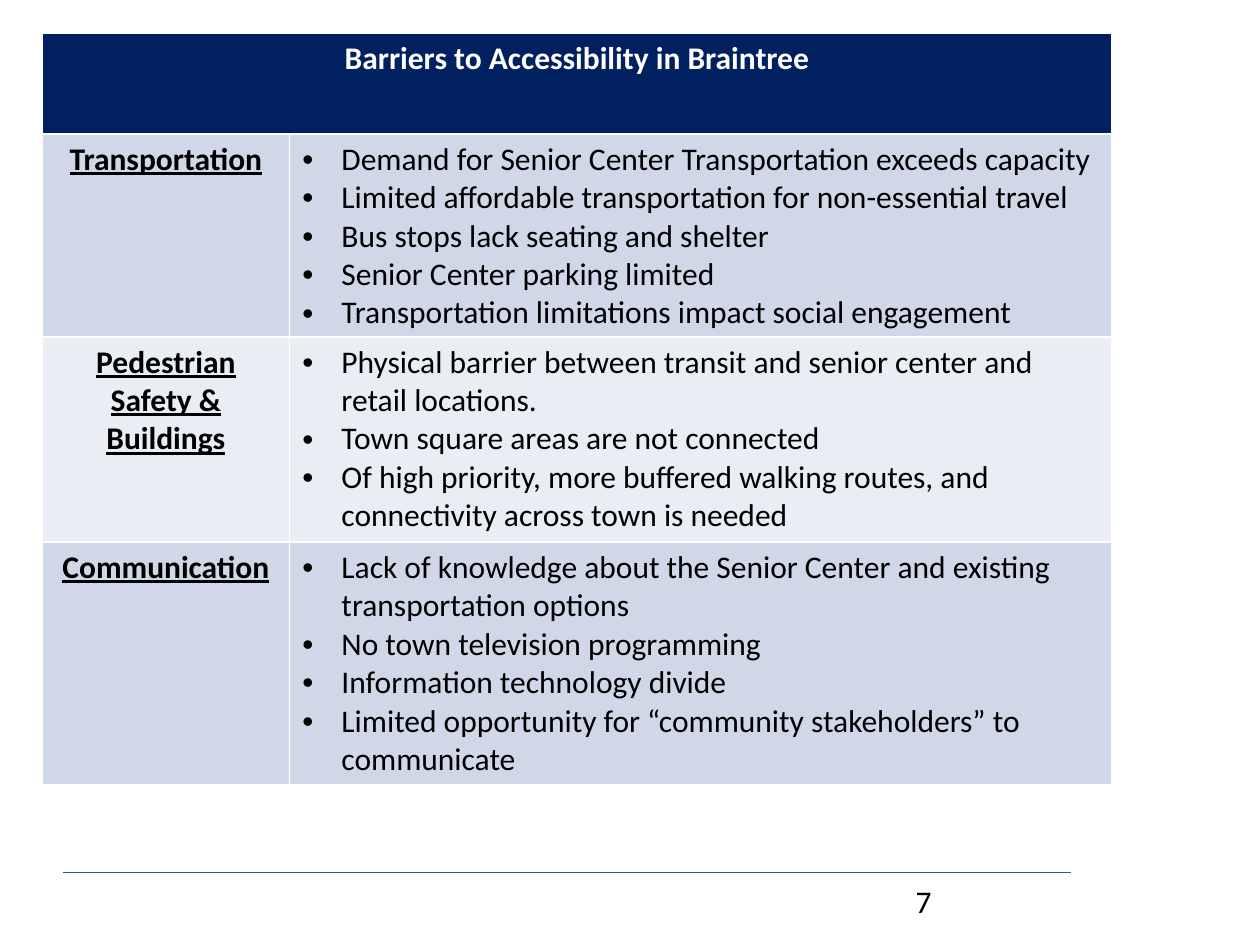
from lxml import etree
from pptx import Presentation
from pptx.dml.color import RGBColor
from pptx.enum.shapes import MSO_CONNECTOR
from pptx.enum.text import PP_ALIGN
from pptx.oxml.ns import qn
from pptx.util import Cm, Pt

STRAIGHT = MSO_CONNECTOR.STRAIGHT
LEFT = PP_ALIGN.LEFT
CENTER = PP_ALIGN.CENTER

NAVY = RGBColor(0x00, 0x20, 0x60)
WHITE = RGBColor(0xFF, 0xFF, 0xFF)
BLACK = RGBColor(0x00, 0x00, 0x00)
BLUE_BAND = RGBColor(0xD0, 0xD8, 0xE8)
PALE_BAND = RGBColor(0xE9, 0xED, 0xF4)
RULE_BLUE = RGBColor(0x2D, 0x58, 0x8D)

TITLE = "Barriers to Accessibility in Braintree"
BARRIERS = [
    ("Transportation", 4.09, [
        "Demand for Senior Center Transportation exceeds capacity",
        "Limited affordable transportation for non-essential travel",
        "Bus stops lack seating and shelter",
        "Senior Center parking limited",
        "Transportation limitations impact social engagement",
    ]),
    ("Pedestrian Safety & Buildings", 4.14, [
        "Physical barrier between transit and senior center and retail locations.",
        "Town square areas are not connected",
        "Of high priority, more buffered walking routes, and connectivity across town is needed",
    ]),
    ("Communication", 4.89, [
        "Lack of knowledge about the Senior Center and existing transportation options",
        "No town television programming",
        "Information technology divide",
        "Limited opportunity for “community stakeholders” to communicate",
    ]),
]


def write_text(frame, lines, color=BLACK, bold=False, underline=False, align=LEFT, bullet=False):
    for index, line in enumerate(lines):
        para = frame.paragraphs[0] if index == 0 else frame.add_paragraph()
        para.alignment = align
        if bullet:
            properties = para._p.get_or_add_pPr()
            properties.set("marL", str(Cm(0.79)))
            properties.set("indent", str(-Cm(0.79)))
            etree.SubElement(properties, qn("a:buFont")).set("typeface", "Arial")
            etree.SubElement(properties, qn("a:buChar")).set("char", "•")
        span = para.add_run()
        span.text = line
        span.font.name = "Calibri"
        span.font.size = Pt(18)
        span.font.bold = bold
        span.font.underline = underline
        span.font.color.rgb = color


deck = Presentation()
deck.slide_width = Cm(25.4)
deck.slide_height = Cm(19.05)
page = deck.slides.add_slide(deck.slide_layouts[6])

rule = page.shapes.add_connector(STRAIGHT, Cm(1.27), Cm(17.58), Cm(21.59), Cm(17.58))
rule.line.color.rgb = RULE_BLUE
rule.line.width = Pt(0.5)
etree.SubElement(rule._element.spPr, qn("a:effectLst"))

number_box = page.shapes.add_textbox(Cm(18.21), Cm(17.65), Cm(5.92), Cm(1.02))
number_box.text_frame.word_wrap = True
write_text(number_box.text_frame, ["7"])

table = page.shapes.add_table(
    len(BARRIERS) + 1, 2, Cm(0.85), Cm(0.67), Cm(21.57), Cm(15.15)
).table
table.columns[0].width = Cm(4.99)
table.columns[1].width = Cm(16.58)
table.rows[0].height = Cm(2.03)

header = table.cell(0, 0)
header.merge(table.cell(0, 1))
header.fill.solid()
header.fill.fore_color.rgb = NAVY
write_text(header.text_frame, [TITLE], color=WHITE, bold=True, align=CENTER)

for row, (topic, height, points) in enumerate(BARRIERS, start=1):
    table.rows[row].height = Cm(height)
    for cell in table.rows[row].cells:
        cell.fill.solid()
        cell.fill.fore_color.rgb = BLUE_BAND if row % 2 else PALE_BAND
    write_text(table.cell(row, 0).text_frame, [topic], bold=True, underline=True, align=CENTER)
    write_text(table.cell(row, 1).text_frame, points, bullet=True)

deck.save("out.pptx")
